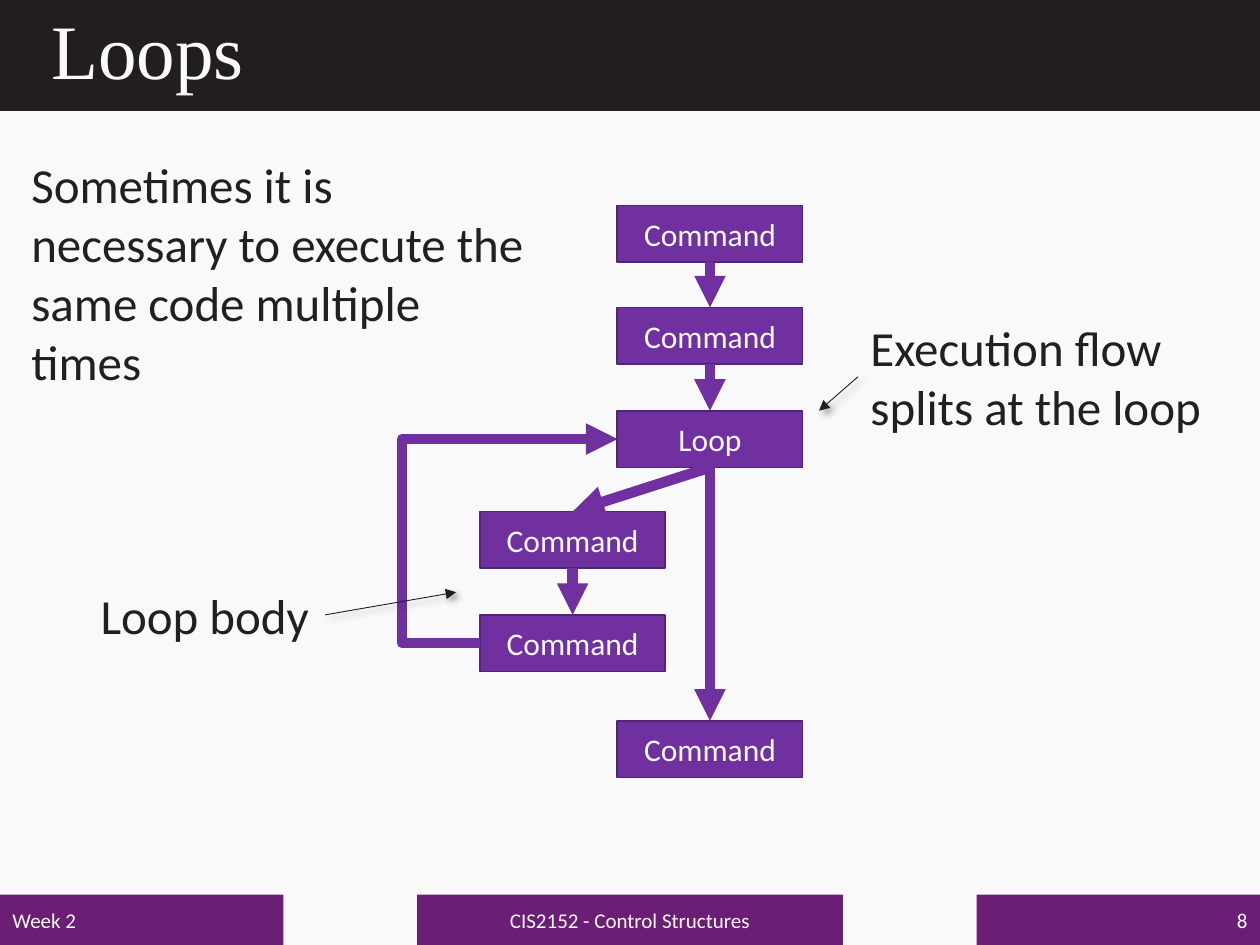
from dataclasses import dataclass

from lxml import etree
from pptx import Presentation
from pptx.dml.color import RGBColor
from pptx.enum.shapes import MSO_CONNECTOR, MSO_SHAPE
from pptx.enum.text import MSO_ANCHOR, PP_ALIGN
from pptx.oxml import parse_xml
from pptx.oxml.ns import nsdecls, qn
from pptx.util import Inches, Pt

RECTANGLE = MSO_SHAPE.RECTANGLE
STRAIGHT, ELBOW = MSO_CONNECTOR.STRAIGHT, MSO_CONNECTOR.ELBOW
LEFT, CENTER, RIGHT = PP_ALIGN.LEFT, PP_ALIGN.CENTER, PP_ALIGN.RIGHT
MIDDLE, TOP = MSO_ANCHOR.MIDDLE, MSO_ANCHOR.TOP
TOP_SITE, BOTTOM_SITE = 0, 2


@dataclass(frozen=True)
class Theme:
    paper: str = "F9F9F9"
    header: str = "221E1F"
    footer: str = "6A1F74"
    flow: str = "7030A0"
    outline: str = "532476"
    ink: str = "202020"
    title_font: str = "Times New Roman"
    body_font: str = "Calibri"
    title_size: int = 44
    note_size: int = 28
    step_size: int = 18
    footer_size: int = 12


theme = Theme()
presentation = Presentation()
presentation.slide_width, presentation.slide_height = Inches(10), Inches(7.5)
slide = presentation.slides.add_slide(presentation.slide_layouts[6])
slide.background.fill.solid()
slide.background.fill.fore_color.rgb = RGBColor.from_string(theme.paper)


def add_text(place, text, size, color, fill=None, outline=None,
             align=LEFT, anchor=MIDDLE, font=theme.body_font, wrap=True):
    box = [Inches(length) for length in place]
    if fill:
        shape = slide.shapes.add_shape(RECTANGLE, *box)
        shape.shadow.inherit = False
        shape.fill.solid()
        shape.fill.fore_color.rgb = RGBColor.from_string(fill)
        if outline:
            shape.line.color.rgb = RGBColor.from_string(outline)
            shape.line.width = Pt(1)
        else:
            shape.line.fill.background()
    else:
        shape = slide.shapes.add_textbox(*box)
    frame = shape.text_frame
    frame.word_wrap = wrap
    frame.vertical_anchor = anchor
    frame.text = text
    paragraph = frame.paragraphs[0]
    paragraph.alignment = align
    for run in paragraph.runs:
        run.font.name = font
        run.font.size = Pt(size)
        run.font.color.rgb = RGBColor.from_string(color)
    return shape


def add_arrow(start, end, color, width, kind=STRAIGHT, shadow=False):
    points = [Inches(length) for length in (*start, *end)]
    arrow = slide.shapes.add_connector(kind, *points)
    arrow.line.color.rgb = RGBColor.from_string(color)
    arrow.line.width = Pt(width)
    etree.SubElement(arrow.line._get_or_add_ln(), qn("a:tailEnd"), type="triangle")
    effect = (
        '<a:outerShdw blurRad="50800" dist="38100" dir="2700000">'
        '<a:srgbClr val="000000"><a:alpha val="40000"/></a:srgbClr></a:outerShdw>'
        if shadow else ""
    )
    arrow._element.spPr.append(
        parse_xml(f'<a:effectLst {nsdecls("a")}>{effect}</a:effectLst>'))
    return arrow


add_text((0, 0, 10, 0.88), "", theme.title_size, theme.paper, fill=theme.header)
title = add_text((0.31, 0, 9.39, 0.86), "Loops", theme.title_size, theme.paper,
                 font=theme.title_font)
title.text_frame.paragraphs[0].line_spacing = 0.9

for left, width, text, align in (
    (0, 2.25, "Week 2", LEFT),
    (3.31, 3.38, "CIS2152 - Control Structures", CENTER),
    (7.75, 2.25, "8", RIGHT),
):
    add_text((left, 7.1, width, 0.4), text, theme.footer_size, theme.paper,
             fill=theme.footer, align=align)

step_width, step_height = 1.47, 0.45
main_left, body_left = 4.9, 3.81
step_places = {
    "first": (main_left, 1.63),
    "second": (main_left, 2.44),
    "loop": (main_left, 3.26),
    "body first": (body_left, 4.06),
    "body last": (body_left, 4.88),
    "after": (main_left, 5.72),
}
steps = {
    step: add_text((*place, step_width, step_height),
                   "Loop" if step == "loop" else "Command",
                   theme.step_size, theme.paper, fill=theme.flow,
                   outline=theme.outline, align=CENTER)
    for step, place in step_places.items()
}

for source, target in (
    ("first", "second"),
    ("second", "loop"),
    ("loop", "body first"),
    ("body first", "body last"),
    ("loop", "after"),
):
    (source_left, source_top), (target_left, target_top) = (
        step_places[source], step_places[target])
    flow_arrow = add_arrow(
        (source_left + step_width / 2, source_top + step_height),
        (target_left + step_width / 2, target_top), theme.flow, 6)
    flow_arrow.begin_connect(steps[source], BOTTOM_SITE)
    flow_arrow.end_connect(steps[target], TOP_SITE)

return_start, return_end = (
    (step_places[step][0], step_places[step][1] + step_height / 2)
    for step in ("body last", "loop"))
return_arrow = add_arrow(return_start, return_end, theme.flow, 6, kind=ELBOW)
bend = return_arrow._element.spPr.find(qn("a:prstGeom")).find(qn("a:avLst"))
etree.SubElement(bend, qn("a:gd"), name="adj1", fmla="val -56800")

for place, text, wrap in (
    ((0.15, 1.18, 4.21, 1.99),
     "Sometimes it is necessary to execute the same code multiple times", True),
    ((6.81, 2.47, 2.88, 1.04), "Execution flow splits at the loop", True),
    ((0.7, 4.6, 1.87, 0.57), "Loop body", False),
):
    add_text(place, text, theme.note_size, theme.ink, anchor=TOP, wrap=wrap)

for start, end in (((6.81, 2.99), (6.5, 3.26)), ((2.58, 4.88), (3.62, 4.7))):
    add_arrow(start, end, theme.ink, 0.5, shadow=True)

presentation.save("out.pptx")
